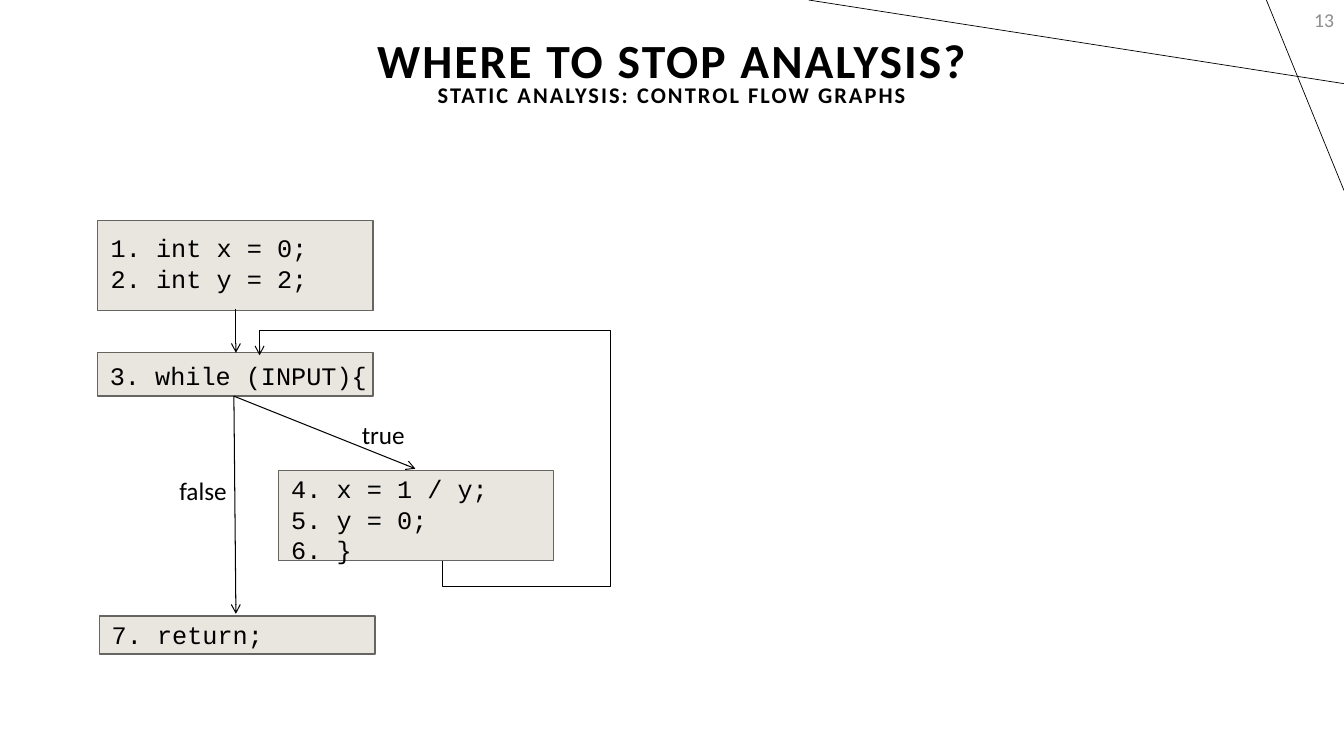
from lxml import etree
from pptx import Presentation, util as u
from pptx.dml.color import RGBColor
from pptx.enum import shapes, text
from pptx.oxml.ns import qn

BLACK = RGBColor(0x00, 0x00, 0x00)
GREY = RGBColor(0x8C, 0x8C, 0x8C)
BLOCK_FILL = RGBColor(0xE9, 0xE6, 0xDF)
BLOCK_LINE = RGBColor(0x66, 0x65, 0x62)
SANS, MONO = "Calibri", "Courier New"
WIDTH, HEIGHT = 13.33, 7.5
CENTER, RIGHT = text.PP_ALIGN.CENTER, text.PP_ALIGN.RIGHT
MIDDLE = text.MSO_ANCHOR.MIDDLE
STRAIGHT, ELBOW = shapes.MSO_CONNECTOR.STRAIGHT, shapes.MSO_CONNECTOR.ELBOW

BLOCK_WIDTH, TEXT_WIDTH = 2.73, 2.67
# Each block: left, top, height; text shift right and down, text width, height; code
BLOCKS = [
    ((0.97, 2.19, 0.89), (0.03, 0.07, TEXT_WIDTH, 0.71),
     ["1. int x = 0;", "2. int y = 2;"]),
    ((2.76, 4.67, 0.89), (0.03, -0.02, TEXT_WIDTH, 1.01),
     ["4. x = 1 / y;", "5. y = 0;", "6. }"]),
    ((0.97, 3.5, 0.43), (0.02, 0.03, 2.89, 0.4), ["3. while (INPUT){"]),
    ((0.99, 6.11, 0.38), (0.02, -0.02, TEXT_WIDTH, 0.4), ["7. return;"]),
]
FLOWS = [
    ((2.34, 3.07), (2.34, 3.5)),
    ((2.32, 3.93), (4.12, 4.65)),
    ((2.32, 3.93), (2.34, 6.09)),
]
BRANCHES = [("true", (3.49, 4.11, 0.64, 0.4)), ("false", (1.68, 4.67, 0.72, 0.4))]


def place(shape, box):
    shape.left, shape.top, shape.width, shape.height = map(u.Inches, box)


def write(shape, lines, font, size, color=BLACK, align=None, heading=False):
    """Fill a shape with one paragraph per line."""
    frame = shape.text_frame
    for index, line in enumerate(lines):
        para = frame.add_paragraph() if index else frame.paragraphs[0]
        para.alignment = align
        span = para.add_run()
        span.text = line
        span.font.name, span.font.size = font, u.Pt(size)
        span.font.color.rgb = color
        if heading:
            para.line_spacing = 0.9
            span.font.bold = True
            span.font._element.set("spc", "150")


def add_label(page, box, lines, font, size, wrap=True, anchor=None, **style):
    label = page.shapes.add_textbox(*map(u.Inches, box))
    label.text_frame.word_wrap = wrap
    label.text_frame.vertical_anchor = anchor
    write(label, lines, font, size, **style)


def add_line(page, start, end, weight, arrow=False, kind=STRAIGHT):
    line = page.shapes.add_connector(kind, *map(u.Inches, (*start, *end)))
    line.line.color.rgb = BLACK
    line.line.width = u.Pt(weight)
    if arrow:
        etree.SubElement(line.line._get_or_add_ln(), qn("a:tailEnd"), type="arrow")
    etree.SubElement(line._element.spPr, qn("a:effectLst"))
    return line


def add_header(page, box):
    left, top, width, height = box
    title = page.shapes.title
    place(title, box)
    title.text_frame.word_wrap = True
    title.text_frame.vertical_anchor = MIDDLE
    write(title, ["WHERE TO STOP ANALYSIS?"], SANS, 34, align=CENTER, heading=True)
    add_label(page, (left, top + 0.33, width, height),
              ["STATIC ANALYSIS: CONTROL FLOW GRAPHS"], SANS, 16,
              anchor=MIDDLE, align=CENTER, heading=True)


def add_corner(page, number):
    """Draw the two crossing lines and the page number at the top right."""
    add_line(page, (WIDTH, 0.83), (8.02, 0), 0.5)
    add_line(page, (12.56, 0), (WIDTH, 1.89), 0.5)
    add_label(page, (WIDTH - 3, 0, 3, 0.4), [number], SANS, 14,
              anchor=MIDDLE, color=GREY, align=RIGHT)


def add_block(page, place_at, text_at, code):
    left, top, height = place_at
    right, down, text_width, text_height = text_at
    block = page.shapes.add_shape(shapes.MSO_SHAPE.RECTANGLE,
                                  *map(u.Inches, (left, top, BLOCK_WIDTH, height)))
    block.shadow.inherit = False
    block.fill.solid()
    block.fill.fore_color.rgb = BLOCK_FILL
    block.line.color.rgb = BLOCK_LINE
    block.line.width = u.Pt(1)
    add_label(page, (left + right, top + down, text_width, text_height), code, MONO, 18)


def add_loop(page, box):
    """Draw the five-part arrow back to the loop head; box is its unturned frame."""
    left, top, width, height = box
    loop = add_line(page, (left + width, top), (left, top + height), 0.75, True, ELBOW)
    properties = loop._element.spPr
    properties.find(qn("a:xfrm")).set("rot", str(90 * 60000))
    geometry = properties.find(qn("a:prstGeom"))
    geometry.set("prst", "bentConnector5")
    guides = geometry.find(qn("a:avLst"))
    if guides is None:
        guides = etree.SubElement(geometry, qn("a:avLst"))
    for index, share in enumerate((-12300, -92100, 112300), 1):
        etree.SubElement(guides, qn("a:gd"), name=f"adj{index}", fmla=f"val {share}")


def add_flow_graph(page):
    for block in BLOCKS:
        add_block(page, *block)
    for start, end in FLOWS:
        add_line(page, start, end, 0.75, arrow=True)
    add_loop(page, (2.46, 3.64, 2.04, 1.81))
    for word, box in BRANCHES:
        add_label(page, box, [word], SANS, 18, wrap=False)


def main():
    deck = Presentation()
    deck.slide_width, deck.slide_height = u.Inches(WIDTH), u.Inches(HEIGHT)
    page = deck.slides.add_slide(deck.slide_layouts.get_by_name("Title Only"))
    add_corner(page, "13")
    add_header(page, (0.01, -0.1, 13.31, 1.45))
    add_flow_graph(page)
    deck.save("out.pptx")


if __name__ == "__main__":
    main()
